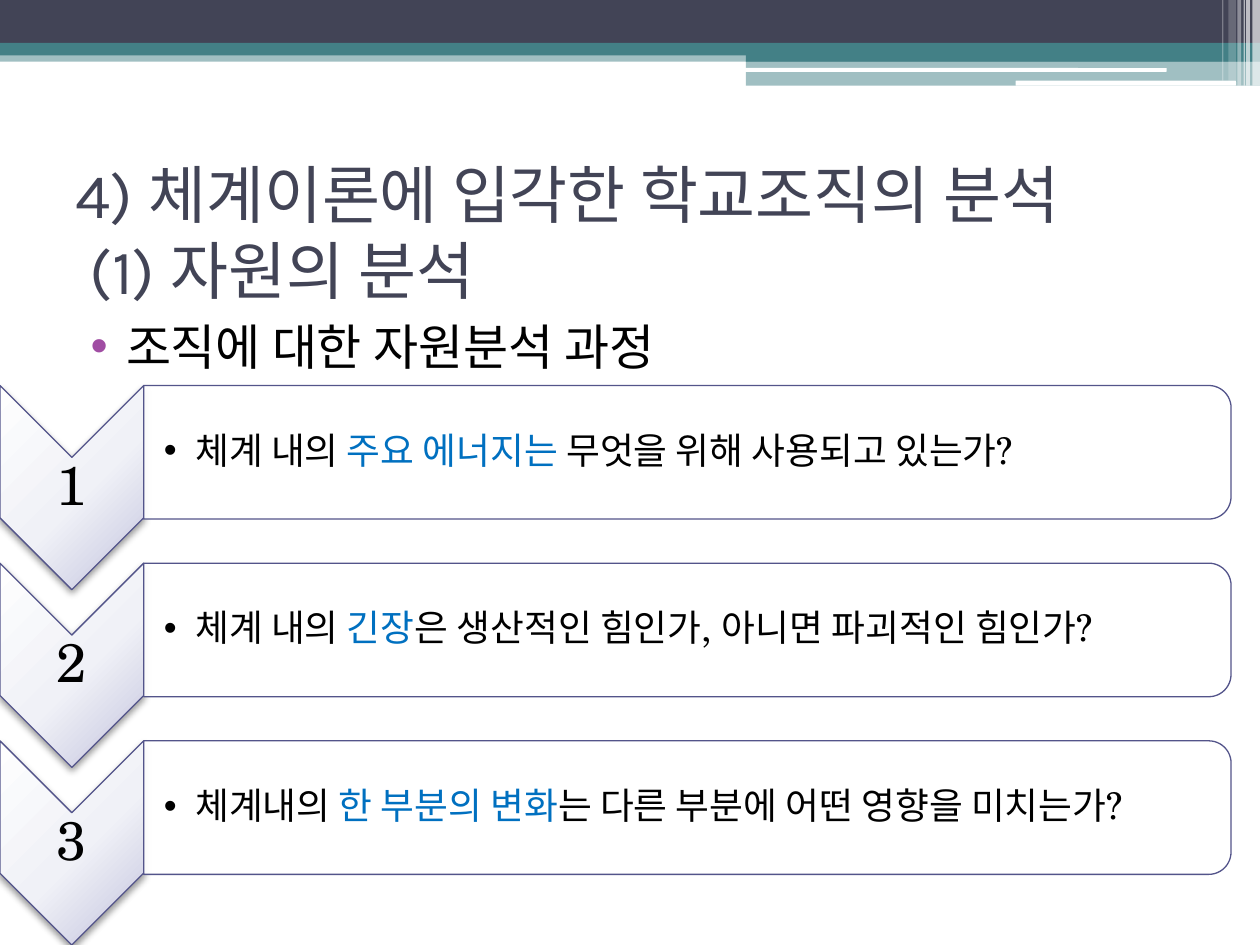
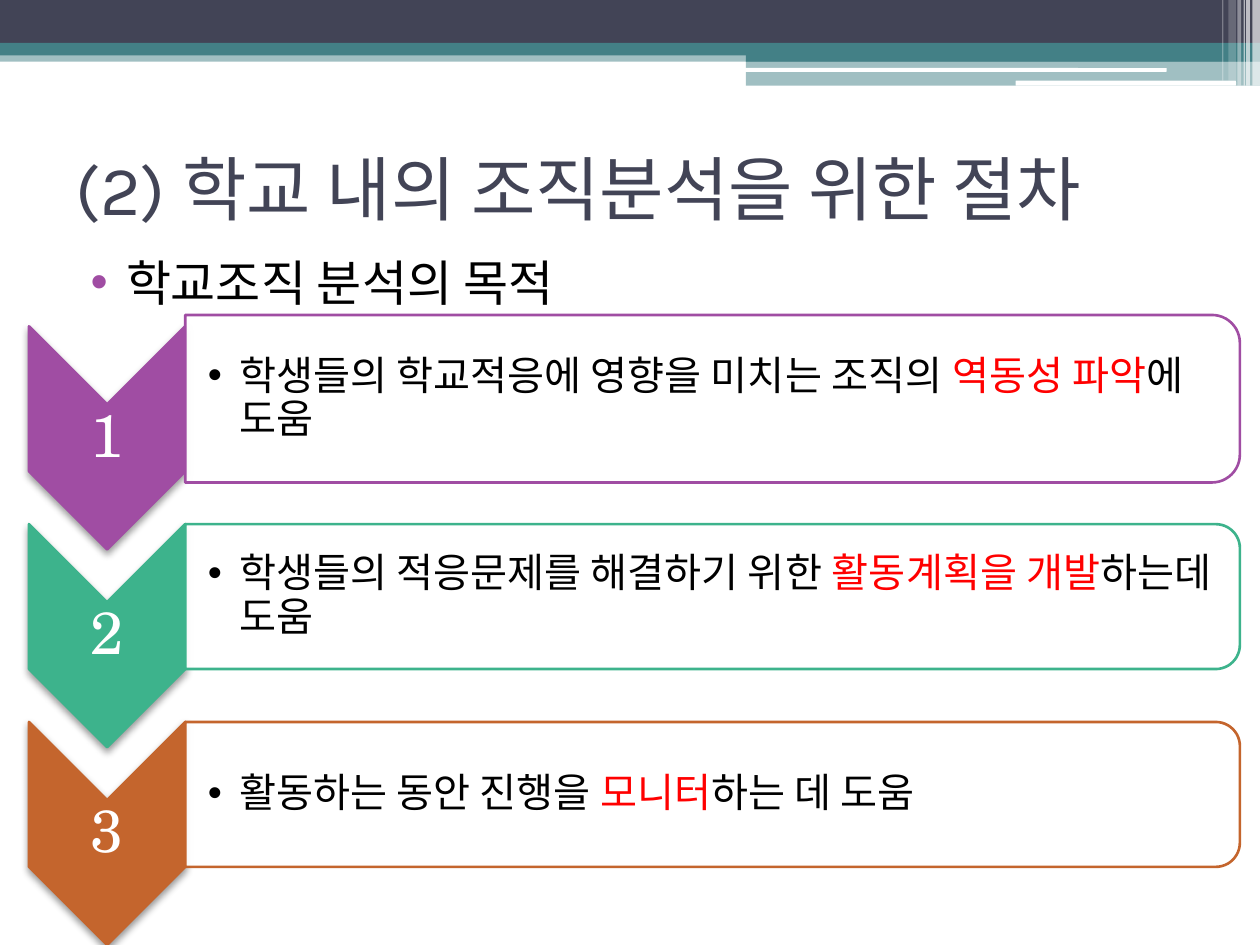
from pptx import Presentation
from pptx.dml.color import RGBColor
from pptx.enum.shapes import MSO_SHAPE
from pptx.enum.text import MSO_ANCHOR, MSO_AUTO_SIZE, PP_ALIGN
from pptx.oxml import parse_xml
from pptx.oxml.ns import qn
from pptx.util import Inches, Pt

RECT = MSO_SHAPE.RECTANGLE
ROUND = MSO_SHAPE.ROUNDED_RECTANGLE
CHEVRON = MSO_SHAPE.CHEVRON
TAB = MSO_SHAPE.ROUND_2_SAME_RECTANGLE
MID = MSO_ANCHOR.MIDDLE
LEFT, CENTER = PP_ALIGN.LEFT, PP_ALIGN.CENTER
FIXED = MSO_AUTO_SIZE.NONE

COLS, ROWS = 100, 75
NS = 'xmlns:a="http://schemas.openxmlformats.org/drawingml/2006/main"'
HEAD, BODY = "Karla", "TeX Gyre Schola"
INK, TEAL, WHITE, BLACK = "424456", "438086", "FFFFFF", "000000"
PLUM, GREEN, RUST, SLATE = "A04DA3", "3DB38C", "C4652D", "53548A"
BLUE, RED = "0070C0", "FF0000"
PALE = [(0, "FEFEFE"), (55, "F0F1F7"), (100, "C2C2DD")]

BANDS = [
    (RECT, 0, 4, 100, 0.9, TEAL, 50),
    (RECT, 0, 0, 100, 3.4, INK, 100),
    (RECT, 0, 3.4, 100, 1, TEAL, 100),
    (RECT, 59.2, 3.9, 40.8, 1, TEAL, 100),
    (RECT, 59.2, 4.8, 40.8, 2, TEAL, 50),
    (ROUND, 59.1, 5.4, 33.5, 0.3, WHITE, 100),
    (ROUND, 80.6, 6.4, 17.5, 0.4, WHITE, 100),
]
STRIPES = [
    (99.4, 0.6, 6.8, 65),
    (98.9, 0.3, 6.8, 65),
    (98.7, 0.1, 6.8, 60),
    (98.2, 0.3, 6.8, 40),
    (97.5, 0.6, 6.4, 20),
    (97, 0.1, 6.4, 30),
]


def tint(code):
    return RGBColor.from_string(code)


class Deck:
    def __init__(self):
        self.prs = Presentation()
        self.prs.slide_width, self.prs.slide_height = Inches(10), Inches(7.5)
        self.slide = None

    def grid(self, left, top, wide, high):
        col = self.prs.slide_width / COLS
        row = self.prs.slide_height / ROWS
        return [round(n) for n in (left * col, top * row, wide * col, high * row)]

    def page(self, title, size, title_at, lead, lead_at):
        first = self.slide is None
        self.slide = self.prs.slides.add_slide(self.prs.slide_layouts[1])
        if first:
            self.bands()
        for hold, text, spot in zip(self.slide.placeholders, (title, lead), (title_at, lead_at)):
            hold.left, hold.top, hold.width, hold.height = self.grid(*spot)
            hold.text_frame.text = text
            hold.text_frame.auto_size = FIXED
        head, body = self.slide.placeholders
        head.text_frame.vertical_anchor = MID
        line = head.text_frame.paragraphs[0]
        line.alignment = LEFT
        self.font(line, HEAD, size, INK)
        line = body.text_frame.paragraphs[0]
        line.space_before = Pt(3)
        self.font(line, BODY, 28, BLACK)
        self.bullet(line, 0.4, 0.28, PLUM)

    def bands(self):
        tree = self.prs.slide_master.element.cSld.spTree
        bars = BANDS + [(RECT, x, 0, w, h, WHITE, a) for x, w, h, a in STRIPES]
        for num, (kind, x, y, w, h, code, alpha) in enumerate(bars, 20):
            bar = self.shape(kind, (x, y, w, h), code, alpha)
            bar.element.nvSpPr.cNvPr.set("id", str(num))
            tree.append(bar.element)

    def shape(self, kind, spot, code, alpha=100, line=None, width=0):
        item = self.slide.shapes.add_shape(kind, *self.grid(*spot))
        item.shadow.inherit = False
        item.fill.solid()
        item.fill.fore_color.rgb = tint(code)
        if alpha < 100:
            clr = item.element.spPr.find(".//" + qn("a:srgbClr"))
            clr.append(parse_xml(f'<a:alpha {NS} val="{alpha * 1000}"/>'))
        if line:
            item.line.color.rgb = tint(line)
            item.line.width = Pt(width)
        else:
            item.line.fill.background()
        return item

    def turned(self, kind, spot, *look):
        x, y, w, h = spot
        item = self.shape(kind, (x + (w - h) / 2, y + (h - w) / 2, h, w), *look)
        item.rotation = 90
        return item

    def shade(self, item):
        item.element.spPr.find(qn("a:effectLst")).append(parse_xml(
            f'<a:outerShdw {NS} blurRad="{Pt(4.1)}" dist="{Pt(2)}" dir="5400000" rotWithShape="0">'
            '<a:srgbClr val="000000"><a:alpha val="40000"/></a:srgbClr></a:outerShdw>'))

    def glow(self, item, stops):
        marks = "".join(f'<a:gs pos="{pos * 1000}"><a:srgbClr val="{code}"/></a:gs>'
                        for pos, code in stops)
        props = item.element.spPr
        props.replace(props.find(qn("a:solidFill")), parse_xml(
            f'<a:gradFill {NS} rotWithShape="1"><a:gsLst>{marks}</a:gsLst><a:path path="circle">'
            '<a:fillToRect l="-40000" t="-90000" r="140000" b="190000"/></a:path></a:gradFill>'))

    def font(self, line, name, size, *codes):
        for run, code in zip(line.runs, codes * len(line.runs)):
            run.font.name = name
            run.font.size = Pt(size)
            run.font.color.rgb = tint(code)

    def bullet(self, line, margin, hang, code):
        props = line._p.get_or_add_pPr()
        props.set("marL", str(Inches(margin)))
        props.set("indent", str(-Inches(hang)))
        for part in (f'<a:buClr {NS}><a:srgbClr val="{code}"/></a:buClr>',
                     f'<a:buFont {NS} typeface="Arial"/>', f'<a:buChar {NS} char="•"/>'):
            props.append(parse_xml(part))

    def text(self, spot, parts, size, codes, after, inset, pad):
        frame = self.slide.shapes.add_textbox(*self.grid(*spot)).text_frame
        frame.word_wrap = True
        frame.vertical_anchor = MID
        frame.margin_left = Inches(inset)
        frame.margin_top = frame.margin_right = frame.margin_bottom = Inches(pad)
        line = frame.paragraphs[0]
        line.line_spacing = 0.9
        line.space_after = Pt(size * after)
        for part in parts:
            line.add_run().text = part
        self.font(line, BODY, size, *codes)
        return line

    def steps(self, rows, left, top, pitch, arrow, box, sizes, key, ink, width, inset, stops=None):
        wide, high = arrow
        span, base = box
        for num, (code, tall, parts) in enumerate(rows):
            y = top + num * pitch
            mark = self.turned(CHEVRON, (left, y, wide, high), code, 100, code, width)
            self.shade(mark)
            if stops:
                self.glow(mark, stops)
            spot = left, y + wide / 2, wide, high - wide
            line = self.text(spot, [str(num + 1)], sizes[0], [ink], 0.35, 0.02, 0.02)
            line.alignment = CENTER
            x, y = left + wide, y + (base - tall) / 2
            self.turned(TAB, (x, y, span, tall), WHITE, 90, code, width)
            spot = x, y + 0.5, span - 0.5, tall - 1
            line = self.text(spot, parts, sizes[1], [BLACK, key, BLACK], 0.15, inset, 0.01)
            self.bullet(line, 0.25, 0.25, BLACK)


def main():
    deck = Deck()
    deck.page("4) 체계이론에 입각한 학교조직의 분석\v (1) 자원의 분석", 36, (5, 12.5, 90, 11.7),
              "조직에 대한 자원분석 과정", (5, 24.6, 90, 47.3))
    asks = [
        ("체계 내의 ", "주요 에너지는 ", "무엇을 위해 사용되고 있는가?"),
        ("체계 내의 ", "긴장", "은 생산적인 힘인가, 아니면 파괴적인 힘인가?"),
        ("체계내의 ", "한 부분의 변화", "는 다른 부분에 어떤 영향을 미치는가?"),
    ]
    deck.steps([(SLATE, 10.6, ask) for ask in asks], 0, 30.6, 14.1, (11.4, 16.2),
               (86.3, 10.6), (31, 21), BLUE, BLACK, 0.75, 0.16, PALE)

    deck.page("(2) 학교 내의 조직분석을 위한 절차", 40, (5, 8.6, 90, 12.5),
              "학교조직 분석의 목적", (5, 19.5, 95, 52.4))
    goals = [
        (PLUM, 13.3, ("학생들의 학교적응에 영향을 미치는 조직의 ", "역동성 파악", "에 도움")),
        (GREEN, 11.5, ("학생들의 적응문제를 해결하기 위한 ", "활동계획을 개발", "하는데 도움")),
        (RUST, 11.5, ("활동하는 동안 진행을 ", "모니터", "하는 데 도움")),
    ]
    deck.steps(goals, 2.3, 25.9, 15.7, (12.4, 17.7), (83.7, 11.5), (34, 23),
               RED, WHITE, 1.5, 0.18)
    deck.prs.save("out.pptx")


if __name__ == "__main__":
    main()
